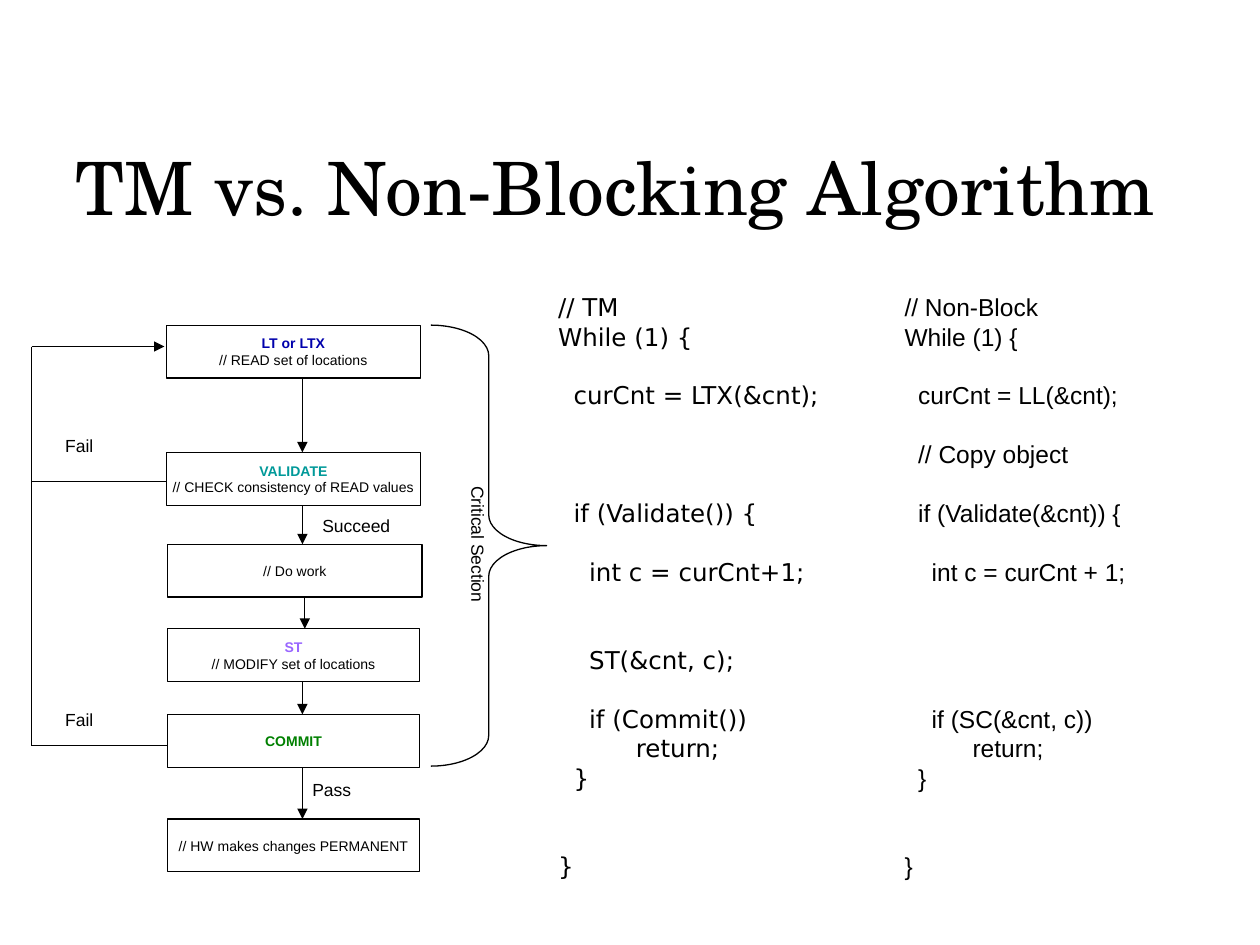
"""Build the slide that compares transactional memory with a non-blocking algorithm."""
from itertools import pairwise

from lxml import etree
from pptx import Presentation
from pptx.dml.color import RGBColor
from pptx.enum import shapes, text
from pptx.oxml import ns
from pptx.util import Pt

COLOURS = {"black": "000000", "read": "0000AC", "validate": "009999",
           "modify": "9966FF", "commit": "008000"}
SANS, CODE, SERIF = "Arial", "DejaVu Sans", "TeX Gyre Schola"
LEADING = 1.2
STEP_HEIGHT = 30.2
LOOP_LEFT, LOOP_TOP, LOOP_BOTTOM = 18, 198, 426.2

# left, top, width, heading, heading colour, remark, x of the arrow below
STEPS = [
    (95, 185.8, 145.4, "LT or LTX", "read", "// READ set of locations", 172.8),
    (95, 258.5, 145.4, "VALIDATE", "validate",
     "// CHECK consistency of READ values", 172.8),
    (95.8, 311, 145.4, "", "black", "// Do work", 174.2),
    (95.8, 359.3, 144, "ST", "modify", "// MODIFY set of locations", 172.8),
    (95.8, 408.2, 144, "COMMIT", "commit", "", 172.8),
    (95.8, 468, 144, "", "black", "// HW makes changes PERMANENT", 172.8),
]

# left, top, width, height, text
LABELS = [
    (177.1, 290.9, 56.9, 19.4, "Succeed"),
    (30.2, 244.8, 31.7, 19.4, "Fail"),
    (30.2, 401.8, 31.7, 19.4, "Fail"),
    (171.4, 441.4, 36.7, 19.4, "Pass"),
]

# line number in the listing, code
TM_CODE = [
    (0, "// TM"), (1, "While (1) {"), (3, "  curCnt = LTX(&cnt);"),
    (7, "  if (Validate()) {"), (9, "    int c = curCnt+1;"),
    (12, "    ST(&cnt, c);"), (14, "    if (Commit())"),
    (15, "          return;"), (16, "  }"), (19, "}"),
]
NON_BLOCK_CODE = [
    (0, "// Non-Block"), (1, "While (1) {"), (3, "  curCnt = LL(&cnt);"),
    (5, "  // Copy object"), (7, "  if (Validate(&cnt)) {"),
    (9, "    int c = curCnt + 1;"), (14, "    if (SC(&cnt, c))"),
    (15, "          return;"), (16, "  }"), (19, "}"),
]


def colour(name):
    """Return the named colour."""
    return RGBColor.from_string(COLOURS[name])


def write(para, words, size, font=SANS, tint="black", bold=False):
    """Put words in a paragraph and format them."""
    para.text = words
    para.line_spacing = Pt(size * LEADING)
    for span in para.runs:
        span.font.name = font
        span.font.size = Pt(size)
        span.font.bold = bold
        span.font.color.rgb = colour(tint)


def add_box(slide, left, top, width, height, wrap=False):
    """Add an empty text box and return its text frame."""
    box = slide.shapes.add_textbox(Pt(left), Pt(top), Pt(width), Pt(height))
    frame = box.text_frame
    frame.word_wrap = wrap
    frame.auto_size = text.MSO_AUTO_SIZE.SHAPE_TO_FIT_TEXT
    return frame


def add_title(slide, words):
    """Add the slide title."""
    frame = add_box(slide, 36, 59.8, 660, 100, wrap=True)
    frame.auto_size = text.MSO_AUTO_SIZE.NONE
    frame.vertical_anchor = text.MSO_ANCHOR.MIDDLE
    para = frame.paragraphs[0]
    write(para, words, 42, SERIF)
    para.line_spacing = 0.9


def add_outline(slide, kind, left, top, width, height):
    """Add an unfilled preset shape with a thin black line."""
    shape = slide.shapes.add_shape(kind, Pt(left), Pt(top), Pt(width), Pt(height))
    shape.shadow.inherit = False
    shape.fill.background()
    shape.line.color.rgb = colour("black")
    shape.line.width = Pt(0.75)
    return shape


def add_step(slide, left, top, width, heading, tint, remark):
    """Add one step of the flow chart."""
    shape = add_outline(slide, shapes.MSO_SHAPE.FLOWCHART_PROCESS,
                        left, top, width, STEP_HEIGHT)
    frame = shape.text_frame
    frame.word_wrap = False
    frame.vertical_anchor = text.MSO_ANCHOR.MIDDLE
    rows = [row for row in ((heading, tint, True), (remark, "black", False)) if row[0]]
    for index, (words, row_tint, bold) in enumerate(rows):
        para = frame.add_paragraph() if index else frame.paragraphs[0]
        para.alignment = text.PP_ALIGN.CENTER
        write(para, words, 8, tint=row_tint, bold=bold)


def add_line(slide, start, end, arrow=False):
    """Add a straight line, with an arrowhead at its end if wanted."""
    line = slide.shapes.add_connector(
        shapes.MSO_CONNECTOR.STRAIGHT, *(Pt(value) for value in (*start, *end)))
    line.line.color.rgb = colour("black")
    line.line.width = Pt(0.75)
    if arrow:
        etree.SubElement(line.line._get_or_add_ln(), ns.qn("a:tailEnd"), type="triangle")
    etree.SubElement(line._element.spPr, ns.qn("a:effectLst"))


def add_code(slide, left, width, font, listing):
    """Add a code listing whose blank lines are paragraph spacing."""
    frame = add_box(slide, left, 163.4, width, 346.3, wrap=True)
    previous = -1
    for number, words in listing:
        para = frame.add_paragraph() if number else frame.paragraphs[0]
        write(para, words, 14, font)
        para.space_before = Pt((number - previous - 1) * 14 * LEADING)
        previous = number


def add_flow(slide):
    """Add the steps, the arrows between them and the retry loop."""
    for *step, _ in STEPS:
        add_step(slide, *step)
    for upper, lower in pairwise(STEPS):
        x = upper[-1]
        add_line(slide, (x, upper[1] + STEP_HEIGHT), (x, lower[1]), arrow=True)
    add_line(slide, (LOOP_LEFT, LOOP_TOP), (94, LOOP_TOP), arrow=True)
    add_line(slide, (LOOP_LEFT, LOOP_TOP), (LOOP_LEFT, LOOP_BOTTOM))
    for right, y in ((95, 275), (95.8, LOOP_BOTTOM)):
        add_line(slide, (right, y), (LOOP_LEFT, y))
    for *place, words in LABELS:
        write(add_box(slide, *place).paragraphs[0], words, 10)


def add_critical_section(slide):
    """Add the brace and its vertical label."""
    brace = add_outline(slide, shapes.MSO_SHAPE.RIGHT_BRACE, 246.2, 185.8, 66.2, 252)
    brace.adjustments[0] = 0.265
    brace.adjustments[1] = 0.5
    frame = add_box(slide, 256.3, 270.7, 26.6, 83.5)
    frame._txBody.bodyPr.set("vert", "vert")
    write(frame.paragraphs[0], "Critical Section", 10)


def main():
    """Build and save the deck."""
    deck = Presentation()
    deck.slide_width, deck.slide_height = Pt(720), Pt(540)
    slide = deck.slides.add_slide(deck.slide_layouts[6])
    add_title(slide, "TM vs. Non-Blocking Algorithm")
    add_flow(slide)
    add_critical_section(slide)
    add_code(slide, 311.8, 252, CODE, TM_CODE)
    add_code(slide, 509.8, 203.8, SANS, NON_BLOCK_CODE)
    deck.save("out.pptx")


if __name__ == "__main__":
    main()
